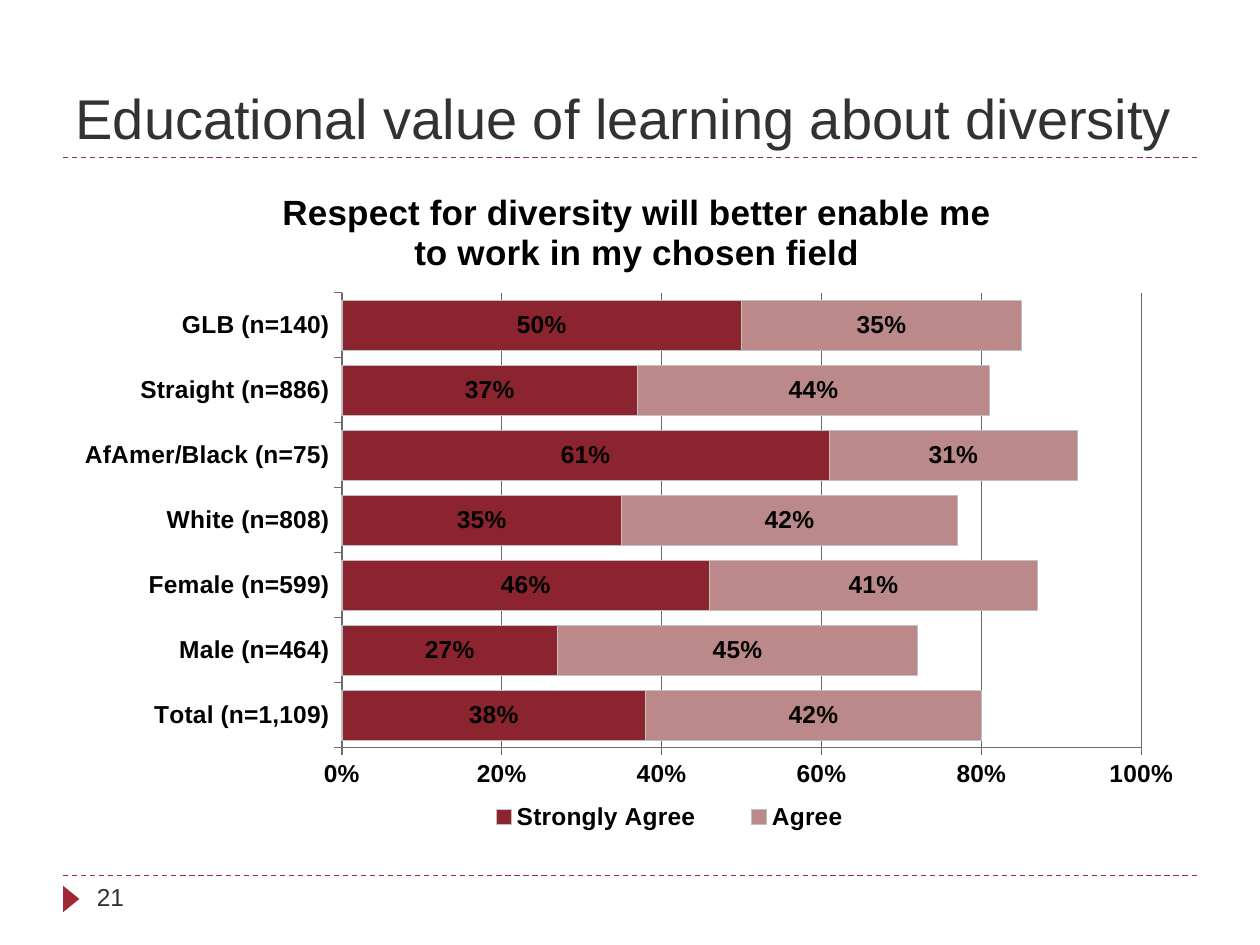
from dataclasses import dataclass

from lxml.etree import SubElement
from pptx import Presentation
from pptx.chart.data import CategoryChartData
from pptx.dml.color import RGBColor
from pptx.enum.chart import XL_CHART_TYPE, XL_LABEL_POSITION, XL_LEGEND_POSITION, XL_TICK_MARK
from pptx.enum.dml import MSO_LINE
from pptx.enum.shapes import MSO_CONNECTOR, MSO_SHAPE
from pptx.enum.text import MSO_ANCHOR, MSO_AUTO_SIZE, PP_ALIGN
from pptx.oxml import parse_xml
from pptx.oxml.ns import nsdecls, qn
from pptx.util import Inches, Pt

COLORS = {
    "accent": "9F2936",
    "text": "323232",
    "black": "000000",
    "strong": "8C2430",
    "agree": "BB898A",
    "edge": "C0C0C0",
    "grid": "6B6B6B",
}
FONT = "Arial"


@dataclass
class Series:
    name: str
    color: str
    values: tuple


@dataclass
class Rule:
    top: float
    left: float = 0.5
    right: float = 9.5


GROUPS = ("Total (n=1,109)", "Male (n=464)", "Female (n=599)", "White (n=808)",
          "AfAmer/Black (n=75)", "Straight (n=886)", "GLB (n=140)")
SERIES = (
    Series("Strongly Agree", "strong", (0.38, 0.27, 0.46, 0.35, 0.61, 0.37, 0.5)),
    Series("Agree", "agree", (0.42, 0.45, 0.41, 0.42, 0.31, 0.44, 0.35)),
)
RULES = (Rule(6.95), Rule(1.25))


def color(name: str) -> RGBColor:
    return RGBColor.from_string(COLORS[name])


def assign(target, values: dict) -> None:
    for name, value in values.items():
        setattr(target, name, value)


def style(font, size: float, tint: str, bold: bool = False) -> None:
    assign(font, {"name": FONT, "size": Pt(size), "bold": bold})
    font.color.rgb = color(tint)


def stroke(line, tint: str, width: float = 0.75) -> None:
    line.color.rgb = color(tint)
    line.width = Pt(width)


def draw_rule(slide, rule: Rule) -> None:
    line = slide.shapes.add_connector(
        MSO_CONNECTOR.STRAIGHT, Inches(rule.left), Inches(rule.top),
        Inches(rule.right), Inches(rule.top))
    stroke(line.line, "accent")
    line.line.dash_style = MSO_LINE.DASH
    SubElement(line._element.spPr, qn("a:effectLst"))


def place(node, index: int, inner: bool = False, **sizes: float) -> None:
    for old in node.findall(qn("c:layout")):
        node.remove(old)
    modes = {"layoutTarget": "inner"} if inner else {}
    modes.update({"xMode": "edge", "yMode": "edge"}, **sizes)
    parts = "".join(f'<c:{key} val="{val}"/>' for key, val in modes.items())
    node.insert(index, parse_xml(
        f'<c:layout {nsdecls("c")}><c:manualLayout>{parts}</c:manualLayout></c:layout>'))


def draw_title(slide) -> None:
    title = slide.shapes.title
    assign(title, {"left": Inches(0.5), "top": Inches(0.17),
                   "width": Inches(9), "height": Inches(1.08)})
    frame = title.text_frame
    frame.text = "Educational value of learning about diversity"
    assign(frame, {"vertical_anchor": MSO_ANCHOR.BOTTOM, "word_wrap": True,
                   "auto_size": MSO_AUTO_SIZE.NONE})
    frame.paragraphs[0].alignment = PP_ALIGN.LEFT
    style(frame.paragraphs[0].runs[0].font, 32, "text")


def draw_footer(slide) -> None:
    mark = slide.shapes.add_shape(MSO_SHAPE.ISOSCELES_TRIANGLE, Inches(0.46),
                                  Inches(7.07), Inches(0.21), Inches(0.13))
    mark.rotation = 90
    mark.shadow.inherit = False
    mark.fill.solid()
    mark.fill.fore_color.rgb = color("accent")
    mark.line.fill.background()
    box = slide.shapes.add_textbox(Inches(0.67), Inches(6.95), Inches(2.17), Inches(0.4))
    box.text_frame.word_wrap = True
    box.text_frame.text = "21"
    style(box.text_frame.paragraphs[0].runs[0].font, 14, "text")


def draw_chart(slide) -> None:
    data = CategoryChartData(number_format="0%")
    data.categories = GROUPS
    for item in SERIES:
        data.add_series(item.name, item.values)
    chart = slide.shapes.add_chart(
        XL_CHART_TYPE.BAR_STACKED, Inches(0.5), Inches(1.33),
        Inches(9), Inches(5.4), data).chart
    style(chart.font, 14, "black", True)

    chart.has_title = True
    frame = chart.chart_title.text_frame
    frame.text = "Respect for diversity will better enable me\nto work in my chosen field"
    for para in frame.paragraphs:
        style(para.runs[0].font, 20, "black", True)
    place(chart.chart_title._element, 1, x=0.19, y=0.03)

    chart.has_legend = True
    assign(chart.legend, {"position": XL_LEGEND_POSITION.BOTTOM, "include_in_layout": False})
    place(chart.legend._element, 1, x=0.34, y=0.92, w=0.39, h=0.07)

    plot = chart.plots[0]
    assign(plot, {"gap_width": 30, "overlap": 100, "vary_by_categories": False})
    place(chart._chartSpace.chart.plotArea, 0, inner=True, x=0.246, y=0.184, w=0.705, h=0.669)
    for item, bars in zip(SERIES, plot.series):
        bars.format.fill.solid()
        bars.format.fill.fore_color.rgb = color(item.color)
        stroke(bars.format.line, "edge")
        labels = bars.data_labels
        assign(labels, {"show_value": True, "number_format": "0%",
                        "number_format_is_linked": False,
                        "position": XL_LABEL_POSITION.CENTER})
        style(labels.font, 14, "black", True)

    for axis in (chart.category_axis, chart.value_axis):
        assign(axis, {"major_tick_mark": XL_TICK_MARK.OUTSIDE,
                      "minor_tick_mark": XL_TICK_MARK.NONE})
        stroke(axis.format.line, "grid")
        style(axis.tick_labels.font, 14, "black", True)
    scale = chart.value_axis
    assign(scale, {"minimum_scale": 0, "maximum_scale": 1, "major_unit": 0.2,
                   "has_major_gridlines": True})
    stroke(scale.major_gridlines.format.line, "grid")
    assign(scale.tick_labels, {"number_format": "0%", "number_format_is_linked": False})


def main() -> None:
    deck = Presentation()
    assign(deck, {"slide_width": Inches(10), "slide_height": Inches(7.5)})
    slide = deck.slides.add_slide(deck.slide_layouts[5])
    for rule in RULES:
        draw_rule(slide, rule)
    draw_title(slide)
    draw_footer(slide)
    draw_chart(slide)
    deck.save("out.pptx")


if __name__ == "__main__":
    main()
